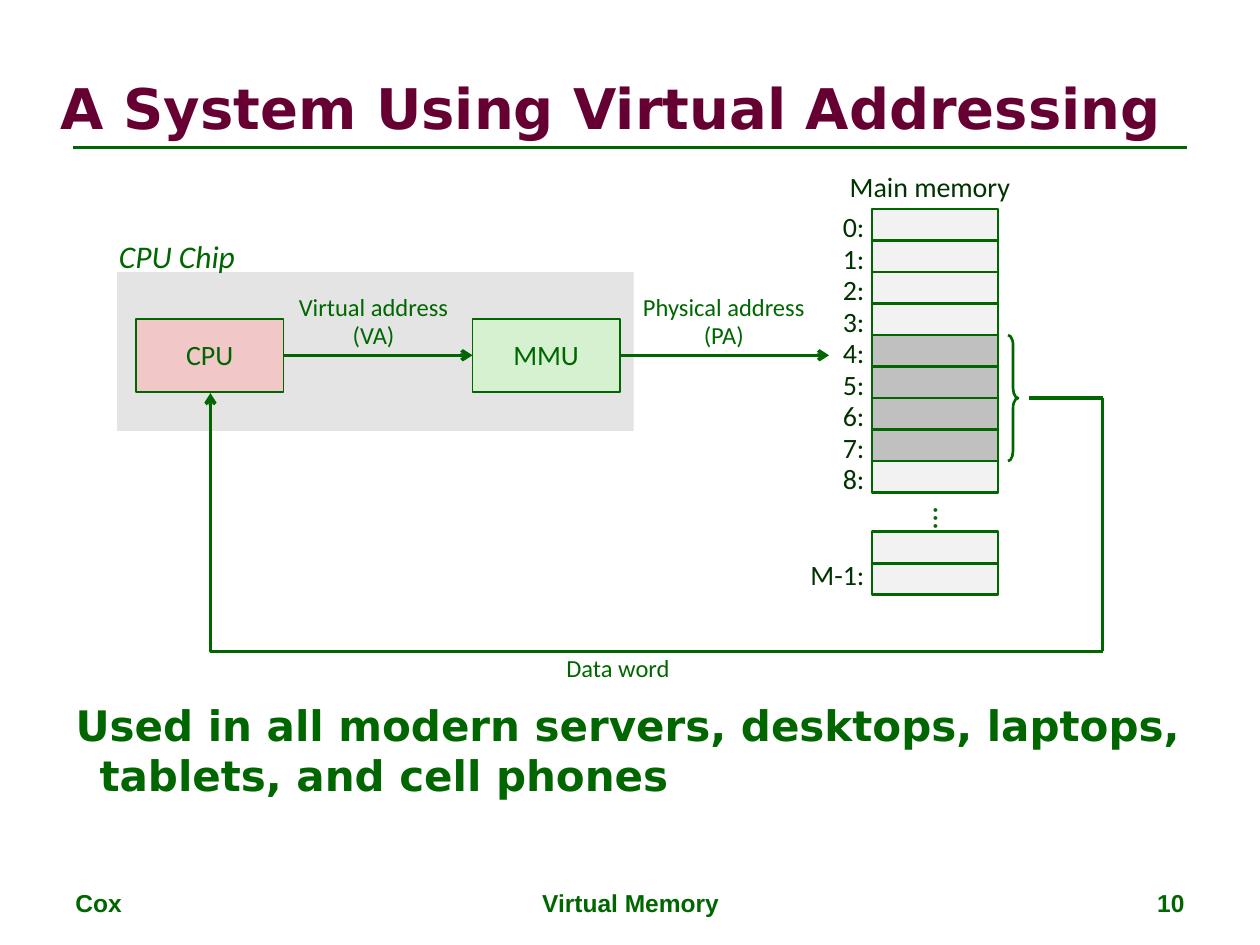
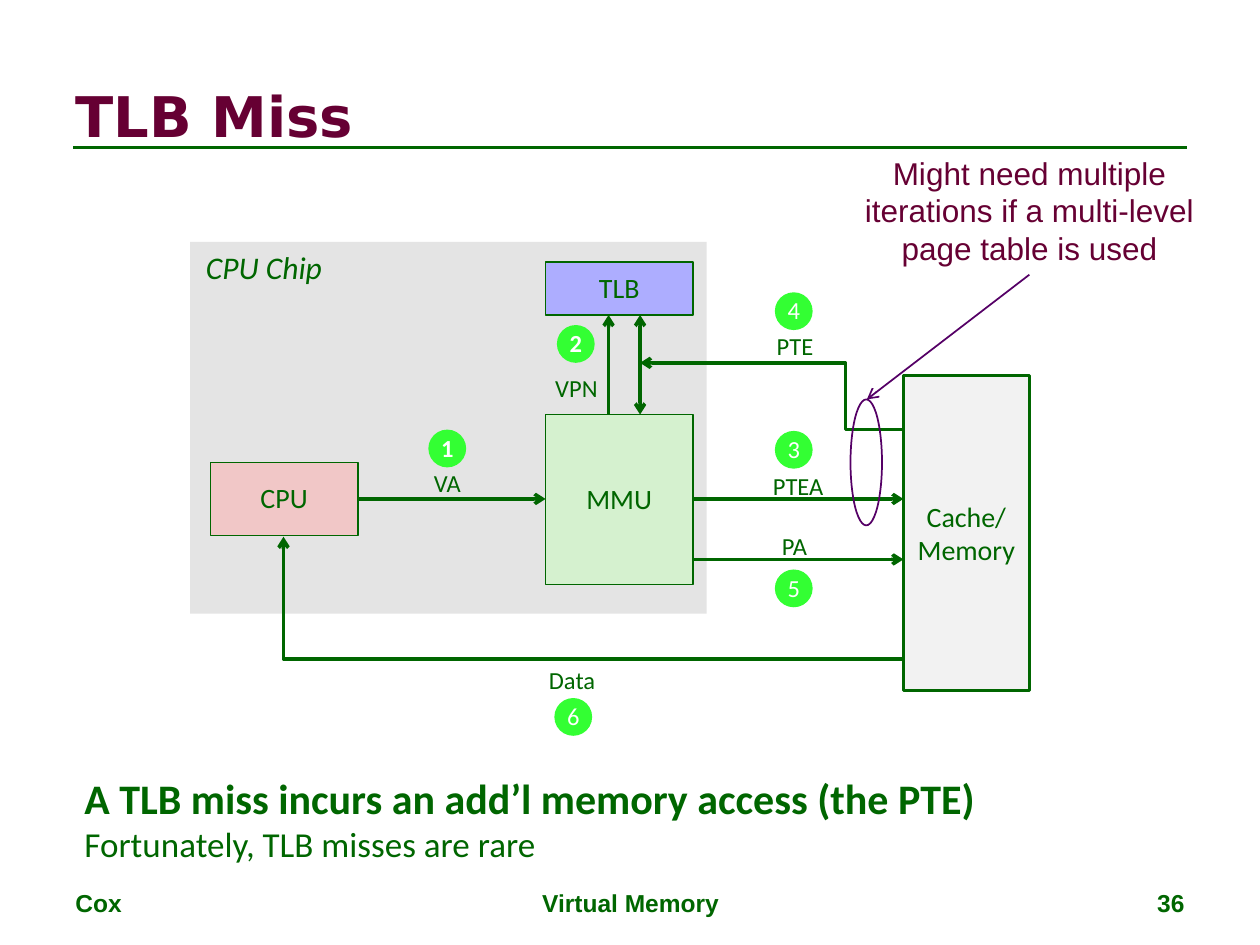
"""Build two slides on virtual addressing and TLB misses."""
from lxml import etree
from pptx import Presentation
from pptx import util as u
from pptx.dml.color import RGBColor
from pptx.enum import shapes as s, text as t
from pptx.oxml.ns import qn

GREEN = RGBColor(0x00, 0x66, 0x00)
DARK = RGBColor(0x00, 0x33, 0x00)
WINE = RGBColor(0x66, 0x00, 0x33)
PLUM = RGBColor(0x55, 0x00, 0x66)
WHITE = RGBColor(0xFF, 0xFF, 0xFF)
LIME = RGBColor(0x33, 0xFF, 0x33)
GRAY = RGBColor(0xE4, 0xE4, 0xE4)
PALE = RGBColor(0xF2, 0xF2, 0xF2)
USED = RGBColor(0xC0, 0xC0, 0xC0)
PINK = RGBColor(0xF1, 0xC7, 0xC7)
MINT = RGBColor(0xD5, 0xF1, 0xCF)
BLUE = RGBColor(0xAD, 0xAD, 0xFF)

LEFT, MID, RIGHT = t.PP_ALIGN.LEFT, t.PP_ALIGN.CENTER, t.PP_ALIGN.RIGHT
TOP, MIDDLE = t.MSO_ANCHOR.TOP, t.MSO_ANCHOR.MIDDLE
RECT, OVAL = s.MSO_SHAPE.RECTANGLE, s.MSO_SHAPE.OVAL
HEAD = "DejaVu Sans"
CELL = 0.25


def write(shape, words, size=16, font="Calibri", color=GREEN, bold=False,
          italic=False, align=MID, anchor=MIDDLE, wrap=False, lines=0.98, before=0):
    """Fill a shape with formatted text, one paragraph for each line."""
    frame = shape.text_frame
    frame.text = words
    frame.word_wrap = wrap
    frame.auto_size = t.MSO_AUTO_SIZE.NONE
    frame.vertical_anchor = anchor
    for par in frame.paragraphs:
        par.alignment = align
        par.line_spacing = lines
        par.space_before = u.Pt(before)
        face = par.font
        face.name, face.size = font, u.Pt(size)
        face.bold, face.italic = bold, italic
        face.color.rgb = color
    return shape


def place(shape, *spot):
    """Move a shape to left, top, width and height in inches."""
    shape.left, shape.top, shape.width, shape.height = map(u.Inches, spot)
    return shape


def label(slide, words, *spot, **style):
    """Add a text box."""
    return write(slide.shapes.add_textbox(*map(u.Inches, spot)), words, **style)


def block(slide, *spot, kind=RECT, fill=None, line=None, width=1.0, words="", **style):
    """Add a preset shape with optional fill, outline and text."""
    shape = slide.shapes.add_shape(kind, *map(u.Inches, spot))
    shape.shadow.inherit = False
    if fill is None:
        shape.fill.background()
    else:
        shape.fill.solid()
        shape.fill.fore_color.rgb = fill
    if line is None:
        shape.line.fill.background()
    else:
        shape.line.color.rgb = line
        shape.line.width = u.Pt(width)
    if words:
        write(shape, words, **style)
    return shape


def link(slide, *ends, color=GREEN, width=2.0, marks=("tailEnd",),
         kind=s.MSO_CONNECTOR.STRAIGHT):
    """Add a connector between two points with arrowheads at the marked ends."""
    line = slide.shapes.add_connector(kind, *map(u.Inches, ends))
    line.line.color.rgb = color
    line.line.width = u.Pt(width)
    props = line.element.spPr
    for mark in marks:
        etree.SubElement(props.find(qn("a:ln")), qn("a:" + mark), type="arrow")
    etree.SubElement(props, qn("a:effectLst"))
    return line


def bend(slide, *ends, turn=None):
    """Add an arrow going up and left, with one corner or a turn at a share of its width."""
    props = link(slide, *ends, kind=s.MSO_CONNECTOR.ELBOW).element.spPr
    frame = props.find(qn("a:xfrm"))
    for flip in ("flipH", "flipV"):
        frame.attrib.pop(flip, None)
    frame.set("rot", "10800000")
    shape = props.find(qn("a:prstGeom"))
    if turn is None:
        shape.set("prst", "bentConnector2")
    else:
        etree.SubElement(shape.find(qn("a:avLst")), qn("a:gd"),
                         name="adj1", fmla=f"val {round(turn * 100000)}")


def rule(deck, slide):
    """Put the line below the title on the master."""
    line = link(slide, 0.58, 1.17, 9.42, 1.17, width=1.5, marks=())
    deck.slide_master.shapes.element.append(line.element)


def start(deck, title, page, x, y):
    """Add a slide with its title and footers."""
    slide = deck.slides.add_slide(deck.slide_layouts[1])
    write(place(slide.shapes.title, x, y, 9.53, 0.86), title, size=32,
          font=HEAD, color=WINE, bold=True, align=LEFT, wrap=True, lines=1)
    for words, left, wide, align in (("Cox", 0.5, 2.33, LEFT),
                                     ("Virtual Memory", 3.42, 3.17, MID),
                                     (page, 7.17, 2.33, RIGHT)):
        label(slide, words, left, 7, wide, 0.35, size=14, font="Arial",
              bold=True, align=align, anchor=TOP, wrap=True, lines=1)
    return slide


def body(slide, words, *spot, font=HEAD, hang=0):
    """Fill the body placeholder with unbulleted text."""
    shape = write(place(slide.placeholders[1], *spot), words, size=24, font=font,
                  bold=True, align=LEFT, anchor=TOP, wrap=True, lines=1, before=4.8)
    for par in shape.text_frame.paragraphs:
        props = par._p.get_or_add_pPr()
        props.set("marL", str(u.Inches(hang)))
        props.set("indent", str(-u.Inches(hang)))
        bullet = etree.Element(qn("a:buNone"))
        props.find(qn("a:spcBef")).addnext(bullet)
    return shape.text_frame.paragraphs


def chip(slide, x, y, high, name, cpu):
    """Draw the chip area, its name and the CPU at offsets from its corner."""
    block(slide, x, y, 4.1, high, fill=GRAY)
    label(slide, "CPU Chip", x + name[0], y + name[1], 1.19, 0.4,
          size=18, italic=True, anchor=TOP, lines=1)
    block(slide, x + cpu[0], y + cpu[1], 1.17, 0.58, fill=PINK, line=GREEN, words="CPU")


def memory(slide, x, y):
    """Draw the column of memory cells with addresses and a brace."""
    style = dict(color=DARK, anchor=TOP, lines=0.88, before=6)
    label(slide, "Main memory", x - 0.3, y - 0.33, 1.52, 0.34, **style)
    rows = [(f"{n}:", n * CELL) for n in range(9)] + [("", 2.56), ("M-1:", 2.81)]
    for n, (name, down) in enumerate(rows):
        block(slide, x, y + down, 1, CELL, fill=USED if 4 <= n <= 7 else PALE,
              line=GREEN, width=1.5)
        if name:
            lift = 0.06 if name == "M-1:" else 0.01
            label(slide, name, x - 0.76, y + down - lift, 0.8, 0.34,
                  align=RIGHT, wrap=True, **style)
    dots = label(slide, "...", x + 0.08, y + 2.26, 1, CELL, size=18)
    dots.text_frame._txBody.bodyPr.set("vert", "eaVert")
    brace = block(slide, x + 1.08, y + 4 * CELL, 0.08, 4 * CELL,
                  kind=s.MSO_SHAPE.RIGHT_BRACE, line=GREEN, width=1.5)
    brace.adjustments[0] = 1


def system(slide, x, y):
    """Draw the path from the CPU through the MMU to memory and back."""
    chip(slide, x, y, 1.26, (-0.12, -0.33), (0.15, 0.37))
    block(slide, x + 2.82, y + 0.37, 1.17, 0.58, fill=MINT, line=GREEN, words="MMU")
    memory(slide, x + 5.99, y - 0.5)
    for words, left, wide in (("Virtual address\n(VA)", 1.32, 1.43),
                              ("Physical address\n(PA)", 4.05, 1.53)):
        label(slide, words, x + left, y + 0.11, wide, 0.57, size=14)
    label(slide, "Data word", x + 3.45, y + 2.98, 1.05, 0.34, size=14)
    for left, right in ((1.32, 2.82), (3.99, 5.65)):
        link(slide, x + left, y + 0.66, x + right, y + 0.66)
    edge, base = x + 7.82, y + 3.01
    link(slide, x + 7.24, y + 1, edge, y + 1, marks=())
    link(slide, edge, y + 1, edge, base, marks=())
    bend(slide, edge, base, x + 0.74, y + 0.96)


def steps(slide, x, y):
    """Draw the numbered steps with their names."""
    for words, left, top, wide in (("VA", 1.83, 1.75, 0.42), ("VPN", 2.79, 1, 0.55),
                                   ("PTEA", 4.52, 1.77, 0.61), ("PTE", 4.55, 0.66, 0.5),
                                   ("PA", 4.59, 2.25, 0.41), ("Data", 2.74, 3.31, 0.58)):
        label(slide, words, x + left, y + top, wide, 0.34, size=14)
    spots = ((1.89, 1.49), (2.91, 0.66), (4.64, 1.5), (4.64, 0.4), (4.64, 2.6), (2.89, 3.62))
    for n, (left, top) in enumerate(spots, 1):
        block(slide, x + left, y + top, 0.3, 0.3, kind=OVAL, fill=LIME,
              words=str(n), size=14, color=WHITE, bold=n < 3)


def miss(slide, x, y):
    """Draw the chip with its TLB, the memory and the arrows of a miss."""
    chip(slide, x, y, 2.95, (-0.01, 0), (0.16, 1.75))
    block(slide, x + 2.82, y + 0.16, 1.17, 0.42, fill=BLUE, line=GREEN, words="TLB")
    block(slide, x + 2.82, y + 1.37, 1.17, 1.35, fill=MINT, line=GREEN, words="MMU")
    block(slide, x + 5.66, y + 1.06, 1, 2.5, fill=PALE, line=GREEN, width=1.5,
          words="Cache/\nMemory", lines=1)
    for left, right, down in ((1.33, 2.82, 2.04), (3.99, 5.66, 2.04), (3.99, 5.66, 2.52)):
        link(slide, x + left, y + down, x + right, y + down)
    link(slide, x + 3.32, y + 1.37, x + 3.32, y + 0.58)
    link(slide, x + 3.57, y + 0.58, x + 3.57, y + 1.37, marks=("headEnd", "tailEnd"))
    bend(slide, x + 5.66, y + 3.31, x + 0.74, y + 2.34)
    bend(slide, x + 5.66, y + 1.49, x + 3.57, y + 0.96, turn=0.22)
    steps(slide, x, y)


def note(slide, x, y):
    """Add the remark with its arrow and ring."""
    label(slide, "Might need multiple\niterations if a multi-level\npage table is used",
          x, y, 2.84, 1.01, size=18, font="Arial", color=WINE, anchor=TOP, lines=1)
    block(slide, x, y + 2, 0.25, 1, kind=OVAL, line=PLUM)
    link(slide, x + 1.42, y + 1.01, x + 0.13, y + 2, color=PLUM, width=1)


def main():
    """Build and save the deck."""
    deck = Presentation()
    deck.slide_width, deck.slide_height = u.Inches(10), u.Inches(7.5)

    slide = start(deck, "A System Using Virtual Addressing", "10", 0.38, 0.42)
    rule(deck, slide)
    system(slide, 0.93, 2.16)
    body(slide, "Used in all modern servers, desktops, laptops, tablets, and cell phones",
         0.5, 5.5, 9.09, 1.38, hang=0.19)

    slide = start(deck, "TLB Miss", "36", 0.5, 0.48)
    miss(slide, 1.51, 1.92)
    note(slide, 6.75, 1.17)
    pars = body(slide, "A TLB miss incurs an add’l memory access (the PTE)\n"
                "Fortunately, TLB misses are rare", 0.57, 6.08, 8.43, 1, font="Calibri")
    pars[1].font.size, pars[1].font.bold = u.Pt(20), False
    pars[1].space_before = u.Pt(0)

    deck.save("out.pptx")


if __name__ == "__main__":
    main()
